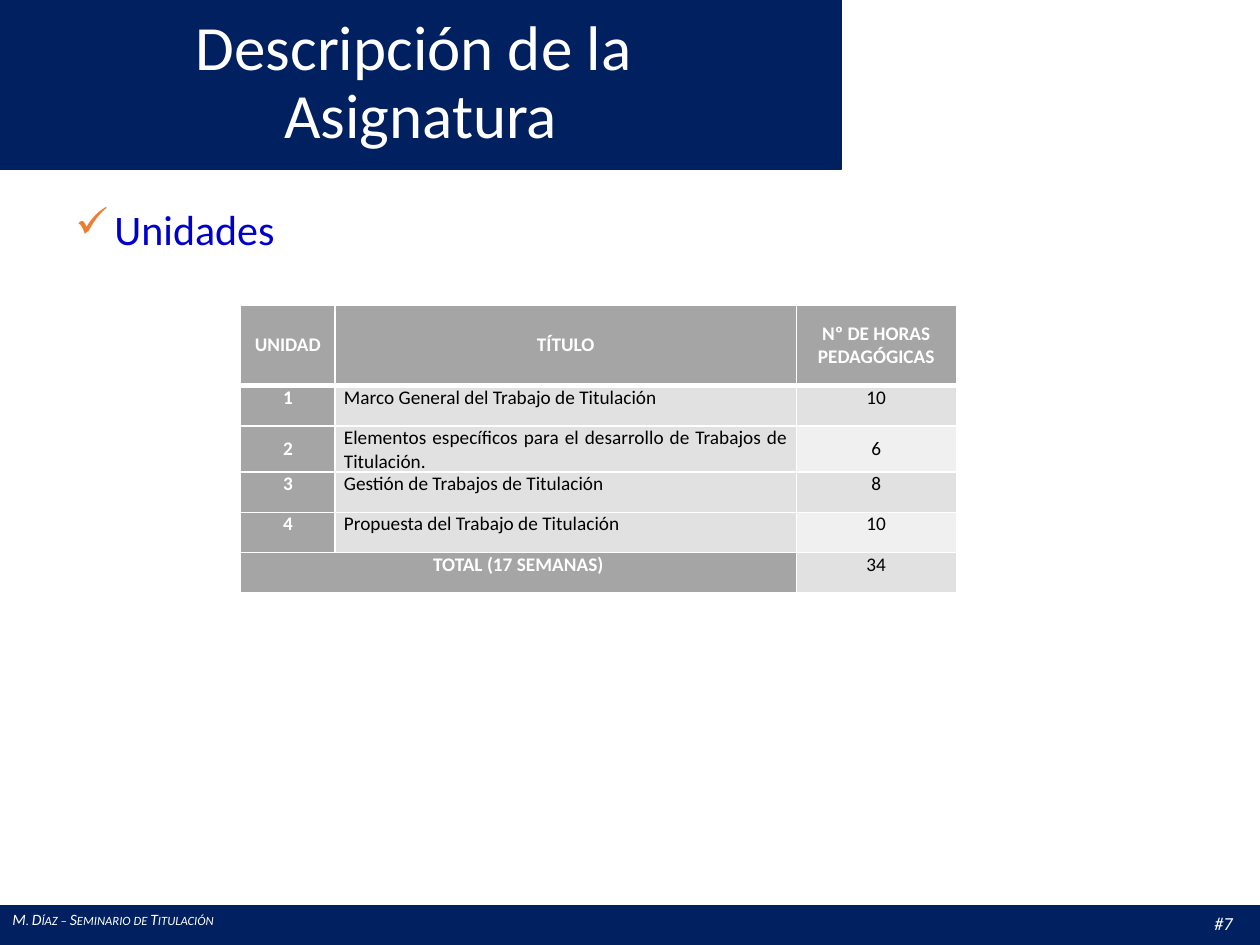
"""Build the course description slide with its table of units."""
from dataclasses import dataclass

from lxml import etree
from pptx import Presentation
from pptx.dml.color import RGBColor
from pptx.enum.shapes import MSO_SHAPE
from pptx.enum.text import MSO_ANCHOR, MSO_AUTO_SIZE, PP_ALIGN
from pptx.oxml.ns import qn
from pptx.util import Inches, Pt

RECTANGLE = MSO_SHAPE.RECTANGLE
TOP, MIDDLE = MSO_ANCHOR.TOP, MSO_ANCHOR.MIDDLE
CENTER, JUSTIFY = PP_ALIGN.CENTER, PP_ALIGN.JUSTIFY
FIT = MSO_AUTO_SIZE.SHAPE_TO_FIT_TEXT


@dataclass(frozen=True)
class Theme:
    """Colours, font and type sizes of the slide."""
    font: str = "Calibri"
    navy: str = "002060"
    white: str = "FFFFFF"
    black: str = "000000"
    blue: str = "0000CC"
    orange: str = "ED7D31"
    gray: str = "A5A5A5"
    odd_band: str = "E1E1E1"
    even_band: str = "F0F0F0"
    title: float = 36
    heading: float = 24
    table: float = 11
    number: float = 10.5
    footer: float = 9


THEME = Theme()
WIDTH, HEIGHT = 10, 7.5

TITLE_LINES = ["Descripción de la ", "Asignatura"]
HEADING = "Unidades"
FOOTER = "M. Díaz – Seminario de Titulación"
PAGE_NUMBER = "#7"
UNITS = [
    ("UNIDAD", "TÍTULO", "Nº DE HORAS PEDAGÓGICAS"),
    ("1", "Marco General del Trabajo de Titulación", "10"),
    ("2", "Elementos específicos para el desarrollo de Trabajos de Titulación. ", "6"),
    ("3", "Gestión de Trabajos de Titulación", "8"),
    ("4", "Propuesta del Trabajo de Titulación", "10"),
    ("TOTAL (17 SEMANAS)", "", "34"),
]
CENTERED_ROWS = (0, 2)

TITLE_BAND = (0, 0, 6.68, 1.34)
FOOTER_BAND = (0, 7.19, WIDTH, HEIGHT - 7.19)
TABLE_LEFT, TABLE_TOP = 1.91, 2.42
COLUMN_WIDTHS = (0.75, 3.66, 1.27)
ROW_HEIGHT = 0.32
ROW_HEIGHTS = [2 * ROW_HEIGHT] + [ROW_HEIGHT] * (len(UNITS) - 1)
CELL_MARGIN = 0.07


def rgb(color):
    return RGBColor.from_string(color)


def add_run(paragraph, text, size, color, bold=False, italic=False):
    run = paragraph.add_run()
    run.text = text
    font = run.font
    font.name, font.size = THEME.font, Pt(size)
    font.bold, font.italic = bold, italic
    font.color.rgb = rgb(color)
    return run


def add_band(slide, box):
    band = slide.shapes.add_shape(RECTANGLE, *map(Inches, box))
    band.shadow.inherit = False
    band.fill.solid()
    band.fill.fore_color.rgb = rgb(THEME.navy)
    band.line.color.rgb = rgb(THEME.navy)
    band.line.width = Pt(1)


def add_label(slide, box):
    frame = slide.shapes.add_textbox(*map(Inches, box)).text_frame
    frame.word_wrap = False
    frame.auto_size = FIT
    return frame.paragraphs[0]


def add_check_bullet(paragraph, indent):
    properties = paragraph._p.get_or_add_pPr()
    properties.set("marL", str(Inches(indent)))
    properties.set("indent", str(-Inches(indent)))
    color = etree.SubElement(properties, qn("a:buClr"))
    etree.SubElement(color, qn("a:srgbClr"), val=THEME.orange)
    etree.SubElement(properties, qn("a:buChar"), char="✓")


def set_borders(cell, bottom):
    properties = cell._tc.get_or_add_tcPr()
    widths = {"a:lnL": 1, "a:lnR": 1, "a:lnT": 1, "a:lnB": bottom}
    for position, (side, width) in enumerate(widths.items()):
        line = etree.Element(qn(side), w=str(Pt(width)))
        fill = etree.SubElement(line, qn("a:solidFill"))
        etree.SubElement(fill, qn("a:srgbClr"), val=THEME.white)
        properties.insert(position, line)


def fill_cell(cell, text, row, column):
    total = row == len(UNITS) - 1
    label = row == 0 or column == 0 or (total and column == 1)
    band = THEME.even_band if column == 2 and row % 2 == 0 else THEME.odd_band
    cell.fill.solid()
    cell.fill.fore_color.rgb = rgb(THEME.gray if label else band)
    set_borders(cell, 3 if row == 0 else 1)
    cell.margin_left = cell.margin_right = Inches(CELL_MARGIN)
    cell.margin_top = cell.margin_bottom = 0
    is_unit_title = column == 1 and not label
    cell.vertical_anchor = MIDDLE if row in CENTERED_ROWS and not is_unit_title else TOP
    if text:
        paragraph = cell.text_frame.paragraphs[0]
        paragraph.alignment = JUSTIFY if is_unit_title else CENTER
        add_run(paragraph, text, THEME.table,
                THEME.white if label else THEME.black, bold=label)


def add_units_table(slide):
    box = (TABLE_LEFT, TABLE_TOP, sum(COLUMN_WIDTHS), sum(ROW_HEIGHTS))
    table = slide.shapes.add_table(
        len(UNITS), len(COLUMN_WIDTHS), *map(Inches, box)).table
    for column, width in zip(table.columns, COLUMN_WIDTHS):
        column.width = Inches(width)
    for row, height in zip(table.rows, ROW_HEIGHTS):
        row.height = Inches(height)
    last = len(UNITS) - 1
    table.cell(last, 0).merge(table.cell(last, 1))
    for row, texts in enumerate(UNITS):
        for column, text in enumerate(texts):
            fill_cell(table.cell(row, column), text, row, column)


def set_title(slide):
    title = slide.shapes.title
    title.left, title.top, title.width, title.height = map(Inches, TITLE_BAND)
    slide.shapes._spTree.append(title._element)
    frame = title.text_frame
    frame.word_wrap = True
    frame.vertical_anchor = MIDDLE
    paragraph = frame.paragraphs[0]
    paragraph.alignment = CENTER
    paragraph.line_spacing = 0.9
    for index, line in enumerate(TITLE_LINES):
        if index:
            paragraph.add_line_break()
        add_run(paragraph, line, THEME.title, THEME.white)


def main():
    presentation = Presentation()
    presentation.slide_width = Inches(WIDTH)
    presentation.slide_height = Inches(HEIGHT)
    slide = presentation.slides.add_slide(presentation.slide_layouts[5])
    for box in (TITLE_BAND, FOOTER_BAND):
        add_band(slide, box)
    footer = add_run(add_label(slide, (0, 7.17, 1.87, 0.25)), FOOTER,
                     THEME.footer, THEME.white, italic=True)
    footer.font._element.set("cap", "small")
    add_run(add_label(slide, (9.54, 7.19, 0.53, 0.28)), PAGE_NUMBER,
            THEME.number, THEME.white, italic=True)
    add_units_table(slide)
    heading = add_label(slide, (0.5, 1.57, 1.8, 0.5))
    add_check_bullet(heading, 0.31)
    heading.alignment = JUSTIFY
    add_run(heading, HEADING, THEME.heading, THEME.blue)
    set_title(slide)
    presentation.save("out.pptx")


if __name__ == "__main__":
    main()
